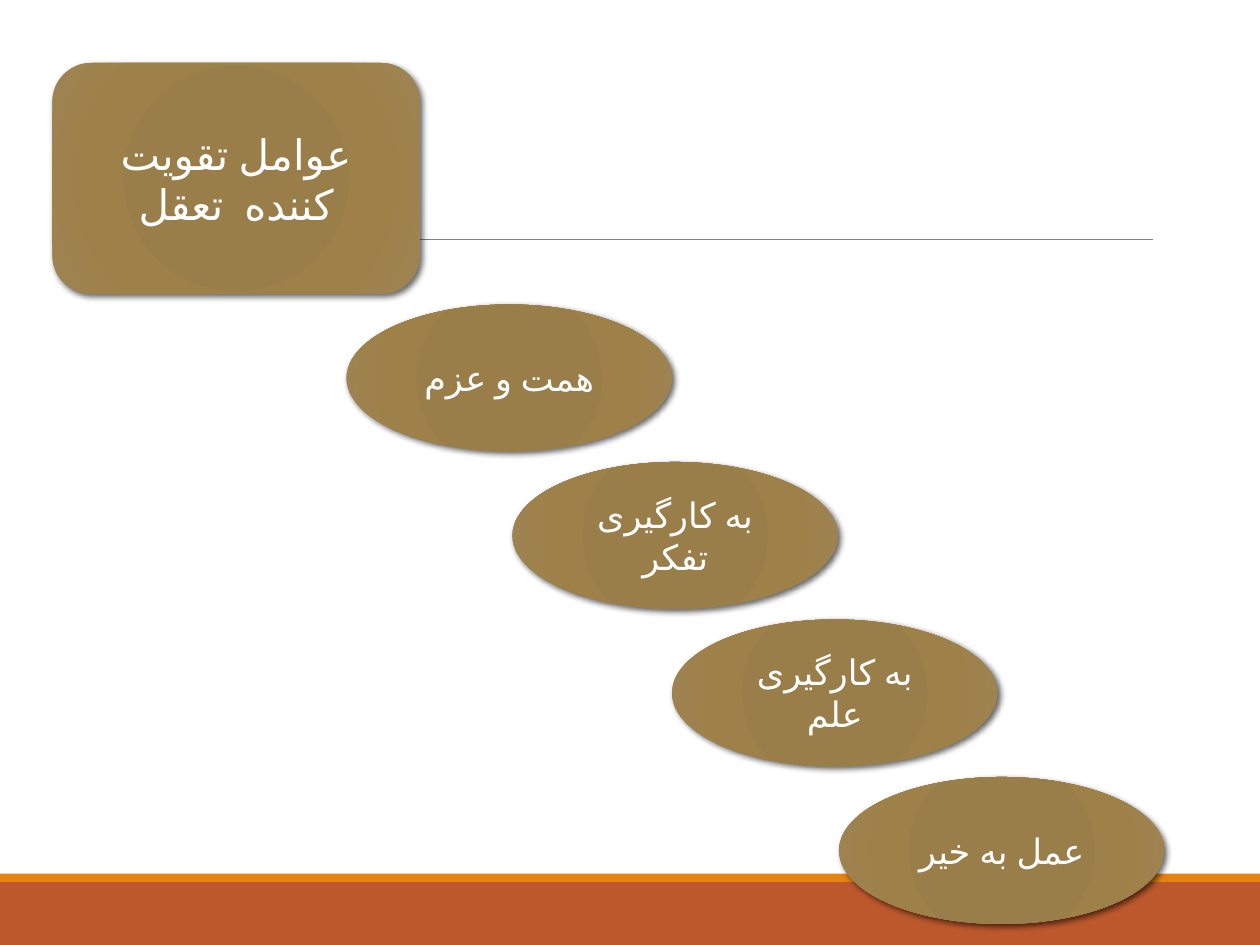
from lxml import etree
from pptx import Presentation
from pptx.dml.color import RGBColor
from pptx.enum.lang import MSO_LANGUAGE_ID
from pptx.enum.shapes import MSO_CONNECTOR, MSO_SHAPE
from pptx.enum.text import MSO_ANCHOR, PP_ALIGN
from pptx.oxml.ns import qn
from pptx.util import Pt

PX = 7620  # EMU per px, 120 px to the inch
WIDTH, HEIGHT = 1200, 900
FONT = "Calibri"
PERSIAN = MSO_LANGUAGE_ID.FARSI
RECT, ROUNDED, OVAL = MSO_SHAPE.RECTANGLE, MSO_SHAPE.ROUNDED_RECTANGLE, MSO_SHAPE.OVAL
STRAIGHT = MSO_CONNECTOR.STRAIGHT
MIDDLE, CENTER = MSO_ANCHOR.MIDDLE, PP_ALIGN.CENTER

COLORS = {
    "footer": "BD582C", "strip": "E48312", "rule": "808080",
    "text": "FFFFFF", "shadow": "000000",
}
BRONZE = {0: "9A7D48", 34: "9A7E4A", 70: "9E8049", 100: "9E8454"}

HEADING = "عوامل تقویت کننده  تعقل"
FACTORS = ["همت و عزم", "به کارگیری تفکر", "به کارگیری علم", "عمل به خیر"]
FACTOR_LEFTS = [0, 158, 310, 469]


def rgb(name):
    return RGBColor.from_string(COLORS[name])


def add_child(parent, tag, **attributes):
    child = etree.SubElement(parent, qn(tag))
    for key, value in attributes.items():
        child.set(key, str(value))
    return child


def add_box(slide, kind, box):
    shape = slide.shapes.add_shape(kind, *(v * PX for v in box))
    shape.shadow.inherit = False
    shape.line.fill.background()
    return shape


def add_bar(slide, box, color):
    bar = add_box(slide, RECT, box)
    bar.fill.solid()
    bar.fill.fore_color.rgb = rgb(color)


def write_text(shape, text, size, color="text"):
    frame = shape.text_frame
    frame.word_wrap = True
    frame.vertical_anchor = MIDDLE
    paragraph = frame.paragraphs[0]
    paragraph.alignment = CENTER
    paragraph._p.get_or_add_pPr().set("rtl", "1")
    run = paragraph.add_run()
    run.text = text
    run.font.size = Pt(size)
    run.font.name = FONT
    run.font.language_id = PERSIAN
    run.font.color.rgb = rgb(color)


def add_bronze(slide, kind, box, text, size):
    shape = add_box(slide, kind, box)
    properties = shape._element.spPr

    # Radial gradient
    gradient = etree.Element(qn("a:gradFill"), rotWithShape="1")
    stops = add_child(gradient, "a:gsLst")
    for position, color in BRONZE.items():
        stop = add_child(stops, "a:gs", pos=position * 1000)
        add_child(stop, "a:srgbClr", val=color)
    circle = add_child(gradient, "a:path", path="circle")
    add_child(circle, "a:fillToRect", l=100000, t=100000, r=100000, b=100000)
    properties.find(qn("a:ln")).addprevious(gradient)

    # Soft shadow to the lower right
    shadow = add_child(properties.find(qn("a:effectLst")), "a:outerShdw",
                       blurRad=Pt(3.5), dist=Pt(2), dir=45 * 60000,
                       algn="br", rotWithShape=0)
    tint = add_child(shadow, "a:srgbClr", val=COLORS["shadow"])
    add_child(tint, "a:alpha", val=60000)

    write_text(shape, text, size)


def add_backdrop(slide, box):
    left, top, width, height = box
    footer_top = top + height - 60
    add_bar(slide, (left, footer_top, width, 60), "footer")
    add_bar(slide, (left, footer_top - 8, width, 8), "strip")

    # Heading rule
    ends = (left + 118, top + 228, left + width - 102, top + 228)
    rule = slide.shapes.add_connector(STRAIGHT, *(v * PX for v in ends))
    rule.line.color.rgb = rgb("rule")
    rule.line.width = Pt(0.5)
    add_child(rule._element.spPr, "a:effectLst")


def add_staircase(slide, box):
    left, top, width, height = box
    oval_width, oval_height = 310, 140
    step = (height - oval_height) // (len(FACTORS) - 1)
    for i, (factor, offset) in enumerate(zip(FACTORS, FACTOR_LEFTS)):
        place = (left + offset, top + i * step, oval_width, oval_height)
        add_bronze(slide, OVAL, place, factor, 20)


def main():
    deck = Presentation()
    deck.slide_width, deck.slide_height = WIDTH * PX, HEIGHT * PX
    slide = deck.slides.add_slide(deck.slide_layouts.get_by_name("Blank"))
    add_backdrop(slide, (0, 0, WIDTH, HEIGHT))
    add_bronze(slide, ROUNDED, (50, 60, 350, 220), HEADING, 24)
    add_staircase(slide, (330, 290, 779, 590))
    deck.save("out.pptx")


if __name__ == "__main__":
    main()
